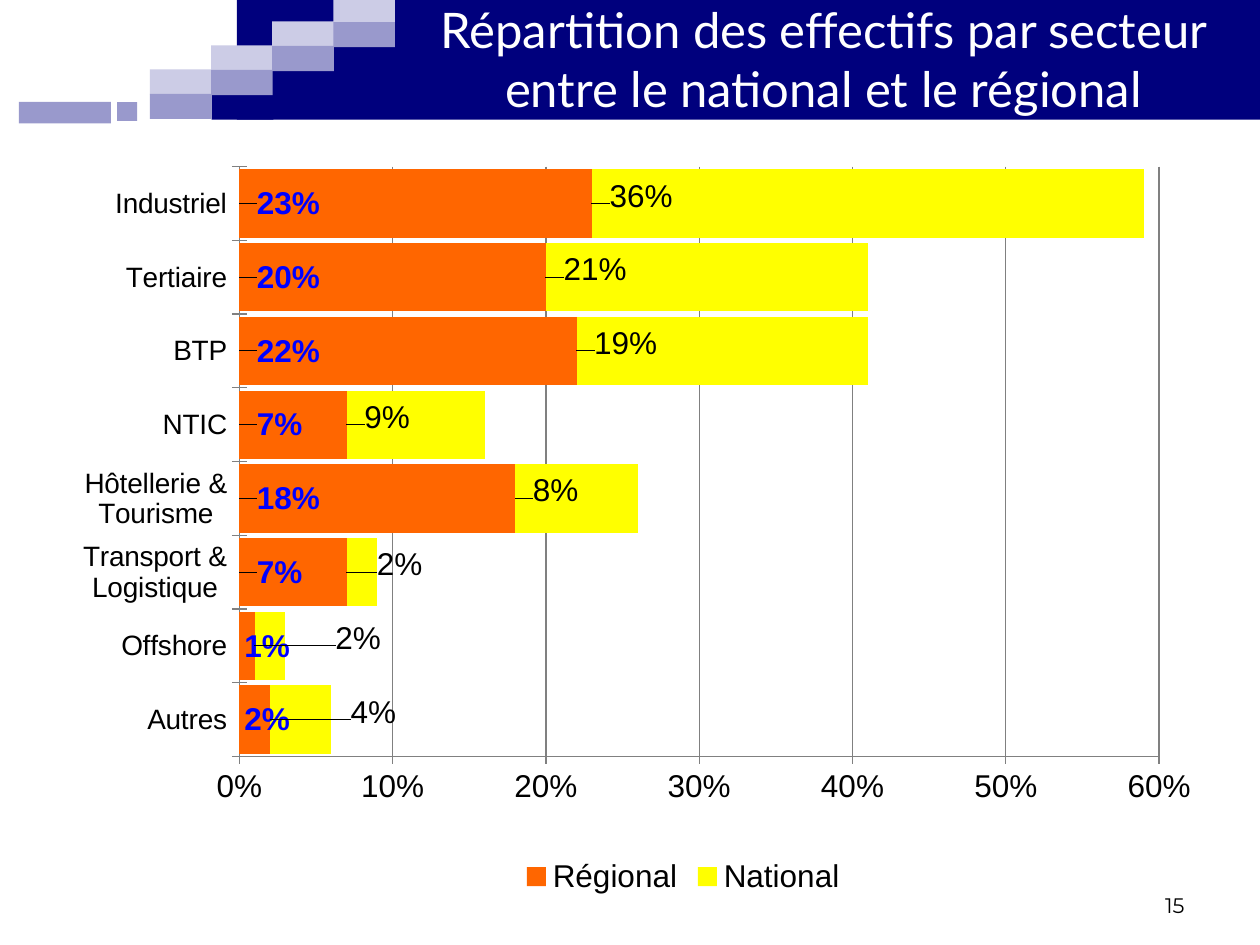
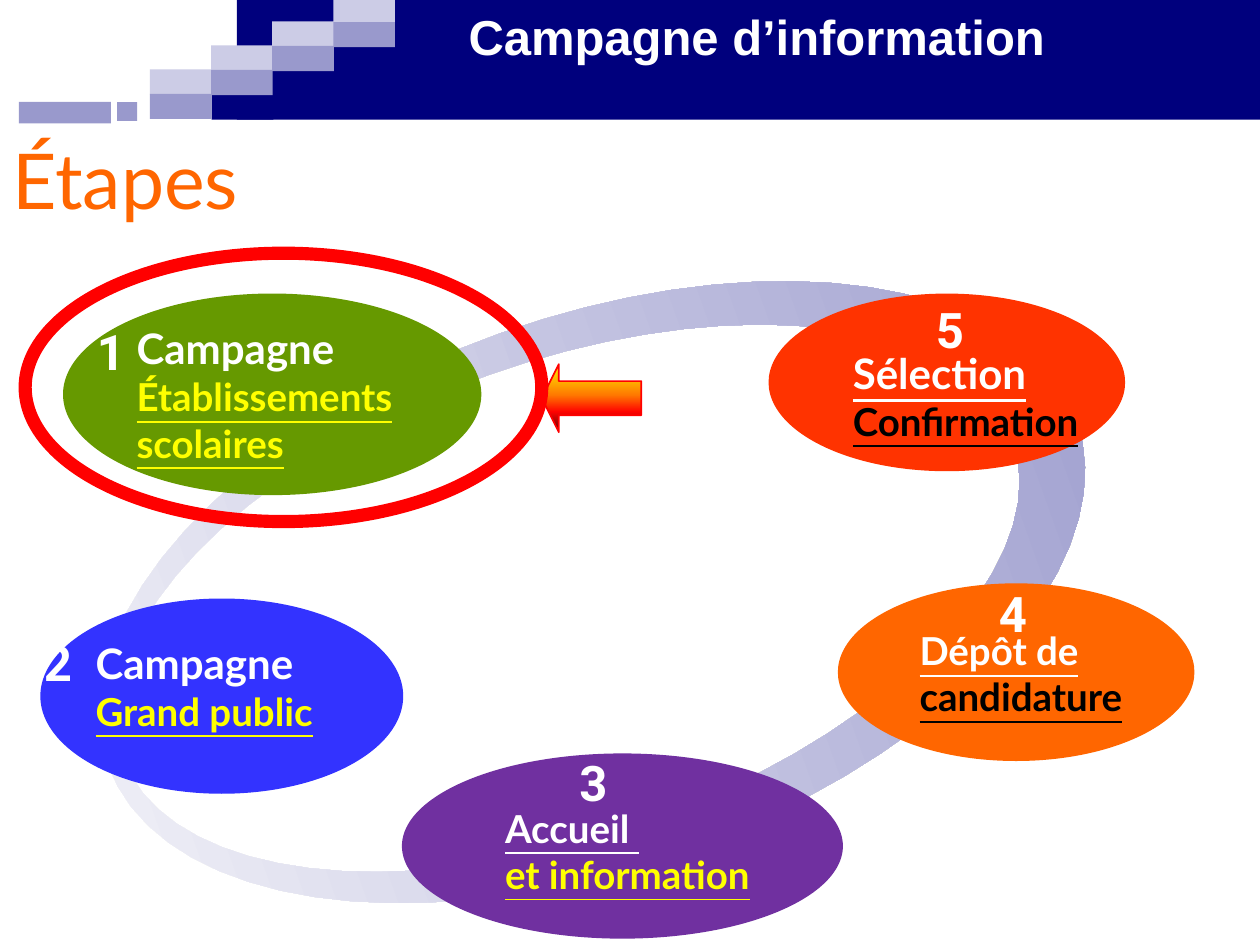
import math
import lxml.etree
import pptx
import pptx.chart.data
import pptx.dml.color
import pptx.enum.chart
import pptx.enum.shapes
import pptx.enum.text
import pptx.oxml.ns
import pptx.util

Inches = pptx.util.Inches
Pt = pptx.util.Pt
qn = pptx.oxml.ns.qn
SHAPE = pptx.enum.shapes.MSO_SHAPE
ALIGN = pptx.enum.text.PP_ALIGN
ANCHOR = pptx.enum.text.MSO_ANCHOR
CHART = pptx.enum.chart

NAVY, LILAC, PALE = "00007D", "9999CC", "CCCCE6"
WHITE, BLACK, YELLOW = "FFFFFF", "000000", "FFFF00"
ORANGE, RED, BLUE, GREY = "FF6600", "FF0000", "0000FF", "808080"


def rgb(color):
    return pptx.dml.color.RGBColor.from_string(color)


def box(at):
    return [Inches(v) for v in at]


def ellipse_points(cx, cy, rx, ry, steps=72):
    angles = [2 * math.pi * i / steps for i in range(steps)]
    return [(Inches(cx + rx * math.cos(a)), Inches(cy + ry * math.sin(a))) for a in angles]


def place(parent, index, **values):
    for old in parent.findall(qn("c:layout")):
        parent.remove(old)
    layout = lxml.etree.Element(qn("c:layout"))
    manual = lxml.etree.SubElement(layout, qn("c:manualLayout"))
    for tag, value in values.items():
        lxml.etree.SubElement(manual, qn("c:" + tag)).set("val", str(value))
    parent.insert(index, layout)


class Deck:
    def __init__(self):
        self.prs = pptx.Presentation()
        self.prs.slide_width = Inches(10)
        self.prs.slide_height = Inches(7.5)
        self.s = None

    def new_slide(self):
        self.s = self.prs.slides.add_slide(self.prs.slide_layouts[6])
        self.shape(SHAPE.RECTANGLE, (1.88, 0, 8.12, 0.95), NAVY)
        self.shape(SHAPE.RECTANGLE, (1.68, 0.75, 0.49, 0.2), NAVY)
        for step in range(4):
            x, y = 1.19 + 0.485 * step, 0.55 - 0.19 * step
            self.shape(SHAPE.RECTANGLE, (x, y, 0.49, 0.2), PALE)
            self.shape(SHAPE.RECTANGLE, (x, y + 0.195, 0.49, 0.2), LILAC)
        self.shape(SHAPE.RECTANGLE, (0.15, 0.81, 0.73, 0.17), LILAC)
        self.shape(SHAPE.RECTANGLE, (0.93, 0.81, 0.16, 0.15), LILAC)

    def paint(self, sp, fill=None, line=None, width=1):
        sp.shadow.inherit = False
        if fill:
            sp.fill.solid()
            sp.fill.fore_color.rgb = rgb(fill)
        else:
            sp.fill.background()
        if line:
            sp.line.color.rgb = rgb(line)
            sp.line.width = Pt(width)
        else:
            sp.line.fill.background()

    def shape(self, kind, at, fill=None, line=None, width=1):
        sp = self.s.shapes.add_shape(kind, *box(at))
        self.paint(sp, fill, line, width)
        return sp

    def gradient(self, sp, stops, angle):
        sp.fill.gradient()
        sp.fill.gradient_angle = (360 - angle) % 360
        stop_list = next(sp._element.iter(qn("a:gsLst")))
        for old in list(stop_list):
            stop_list.remove(old)
        for position, color in stops:
            stop = lxml.etree.SubElement(stop_list, qn("a:gs"), pos=str(position * 1000))
            lxml.etree.SubElement(stop, qn("a:srgbClr"), val=color)

    def ring(self, outer, inner, rotation, stops):
        contours = [ellipse_points(*outer), ellipse_points(*inner)[::-1]]
        builder = self.s.shapes.build_freeform(*contours[0][0])
        builder.add_line_segments(contours[0][1:], close=True)
        builder.move_to(*contours[1][0])
        builder.add_line_segments(contours[1][1:], close=True)
        sp = builder.convert_to_shape()
        self.paint(sp)
        self.gradient(sp, stops, 0)
        sp.rotation = rotation

    def set_text(self, sp, lines, font, bold=False, align=ALIGN.LEFT, anchor=ANCHOR.TOP, wrap=True):
        tf = sp.text_frame
        tf.word_wrap = wrap
        tf.vertical_anchor = anchor
        tf.text = "\n".join(line[0] for line in lines)
        for p, (_, size, color, underline) in zip(tf.paragraphs, lines):
            p.alignment = align
            for r in p.runs:
                r.font.name = font
                r.font.size = Pt(size)
                r.font.bold = bold
                r.font.underline = underline
                r.font.color.rgb = rgb(color)

    def text(self, at, lines, font, **style):
        self.set_text(self.s.shapes.add_textbox(*box(at)), lines, font, **style)

    def stacked_bars(self, at, categories, series):
        data = pptx.chart.data.CategoryChartData(number_format="0%")
        data.categories = categories
        for name, values, *_ in series:
            data.add_series(name, values)
        frame = self.s.shapes.add_chart(CHART.XL_CHART_TYPE.BAR_STACKED, *box(at), data)
        chart = frame.chart
        chart.has_title = False
        chart.font.name = "Arial"
        chart.font.size = Pt(18)
        chart.font.color.rgb = rgb(BLACK)
        plot = chart.plots[0]
        plot.gap_width = 8
        plot.overlap = 100
        plot.vary_by_categories = False
        for bars, (_, _, fill, color, bold, shifts, drop) in zip(plot.series, series):
            bars.format.fill.solid()
            bars.format.fill.fore_color.rgb = rgb(fill)
            for i in range(len(shifts)):
                label = bars.points[i].data_label
                label.font.size = Pt(18)
                label.font.bold = bold
                label.font.color.rgb = rgb(color)
                label.position = CHART.XL_LABEL_POSITION.INSIDE_BASE
            for label, shift in zip(bars._element.iter(qn("c:dLbl")), shifts):
                place(label, 1, x=shift, y=drop)
        for axis in (chart.category_axis, chart.value_axis):
            axis.major_tick_mark = CHART.XL_TICK_MARK.CROSS
            axis.format.line.color.rgb = rgb(GREY)
        chart.category_axis.tick_labels.font.size = Pt(16)
        axis = chart.value_axis
        axis.minimum_scale, axis.maximum_scale, axis.major_unit = 0, 0.6, 0.1
        axis.major_gridlines.format.line.color.rgb = rgb(GREY)
        axis.tick_labels.number_format = "0%"
        axis.tick_labels.number_format_is_linked = False
        chart.has_legend = True
        chart.legend.position = CHART.XL_LEGEND_POSITION.BOTTOM
        chart.legend.include_in_layout = False
        place(chart.legend._element, 1, xMode="edge", yMode="edge", x=0.41, y=0.94)
        place(plot._element.getparent(), 0, layoutTarget="inner", xMode="edge",
              yMode="edge", x=0.19, y=0.04, w=0.73, h=0.77)


def sectors_slide(deck):
    deck.new_slide()
    title = "Répartition des effectifs par secteur entre le national et le régional"
    deck.text((3.08, 0, 6.91, 0.92), [(title, 28, WHITE, False)], "Lato",
              align=ALIGN.CENTER, anchor=ANCHOR.MIDDLE)
    sectors = ["Autres", "Offshore", "Transport & Logistique", "Hôtellerie & Tourisme",
               "NTIC", "BTP", "Tertiaire", "Industriel"]
    regional = [0.02, 0.01, 0.07, 0.18, 0.07, 0.22, 0.2, 0.23]
    national = [0.04, 0.02, 0.02, 0.08, 0.09, 0.19, 0.21, 0.36]
    deck.stacked_bars((0, 1.08, 10, 6.08), sectors, [
        ("Régional", regional, ORANGE, BLUE, True, [0, 0] + [0.01] * 6, 0),
        ("National", national, YELLOW, BLACK, False, [0.06, 0.06, 0.02] + [0.01] * 5, -0.01),
    ])
    deck.text((7.17, 6.83, 2.33, 0.5), [("15", 12, BLACK, False)], "Montserrat",
              align=ALIGN.RIGHT, anchor=ANCHOR.BOTTOM)


def steps_slide(deck):
    deck.new_slide()
    heading = deck.shape(SHAPE.RECTANGLE, (0, 1, 5.08, 0.67), WHITE)
    deck.set_text(heading, [("Étapes", 44, ORANGE, False)], "Lato")
    deck.ring((4.7, 4.7, 4.08, 2.18), (4.5, 4.68, 3.75, 1.88), 340.4,
              [(0, "F8F8FB"), (100, LILAC)])

    schools = deck.shape(SHAPE.OVAL, (0.5, 2.33, 3.32, 1.6), "669900")
    deck.set_text(schools, [("Campagne", 24, WHITE, False), ("Établissements", 22, YELLOW, True),
                            ("scolaires", 22, YELLOW, True)],
                  "Lato", bold=True, anchor=ANCHOR.MIDDLE, wrap=False)
    steps = [
        ("2", (0.32, 4.75, 2.88, 1.55), "3333FF", (0.25, 4.97), (0.66, 5.01, 2.42, 0.91),
         [("Campagne", 24, WHITE, False), ("Grand public", 22, YELLOW, True)]),
        ("3", (3.19, 5.98, 3.5, 1.47), "7030A0", (4.5, 5.92), (3.91, 6.34, 2.59, 0.83),
         [("Accueil ", 22, WHITE, True), ("et information", 22, YELLOW, True)]),
        ("4", (6.65, 4.63, 2.83, 1.41), ORANGE, (7.83, 4.58), (7.2, 4.93, 2.13, 0.83),
         [("Dépôt de", 22, WHITE, True), ("candidature", 22, BLACK, True)]),
        ("5", (6.1, 2.33, 2.83, 1.41), "FF3300", (7.33, 2.33), (6.67, 2.71, 2.17, 0.88),
         [("Sélection", 24, WHITE, True), ("Confirmation", 22, BLACK, True)]),
    ]
    for _, oval, fill, _, caption, lines in steps:
        deck.shape(SHAPE.OVAL, oval, fill)
        deck.text(caption, lines, "Lato", bold=True)
    numbers = [("1", (0.67, 2.5))] + [(step[0], step[3]) for step in steps]
    for number, corner in numbers:
        deck.text((*corner, 0.5, 0.57), [(number, 28, WHITE, False)], "Roboto", bold=True)

    arrow = deck.shape(SHAPE.LEFT_ARROW, (4.3, 2.89, 0.79, 0.54), line=RED)
    arrow.adjustments[0], arrow.adjustments[1] = 0.5, 0.25
    deck.gradient(arrow, [(0, "FFF200"), (45, "FF7A00"), (70, "FF0300"), (100, "4D0808")], 90)
    deck.shape(SHAPE.OVAL, (0.2, 2.01, 4.1, 2.13), line=RED, width=7.5)
    deck.text((3.62, 0, 5.88, 0.57), [("Campagne d’information", 28, WHITE, False)],
              "Arial", bold=True)


def main():
    deck = Deck()
    sectors_slide(deck)
    steps_slide(deck)
    deck.prs.save("out.pptx")


if __name__ == "__main__":
    main()
